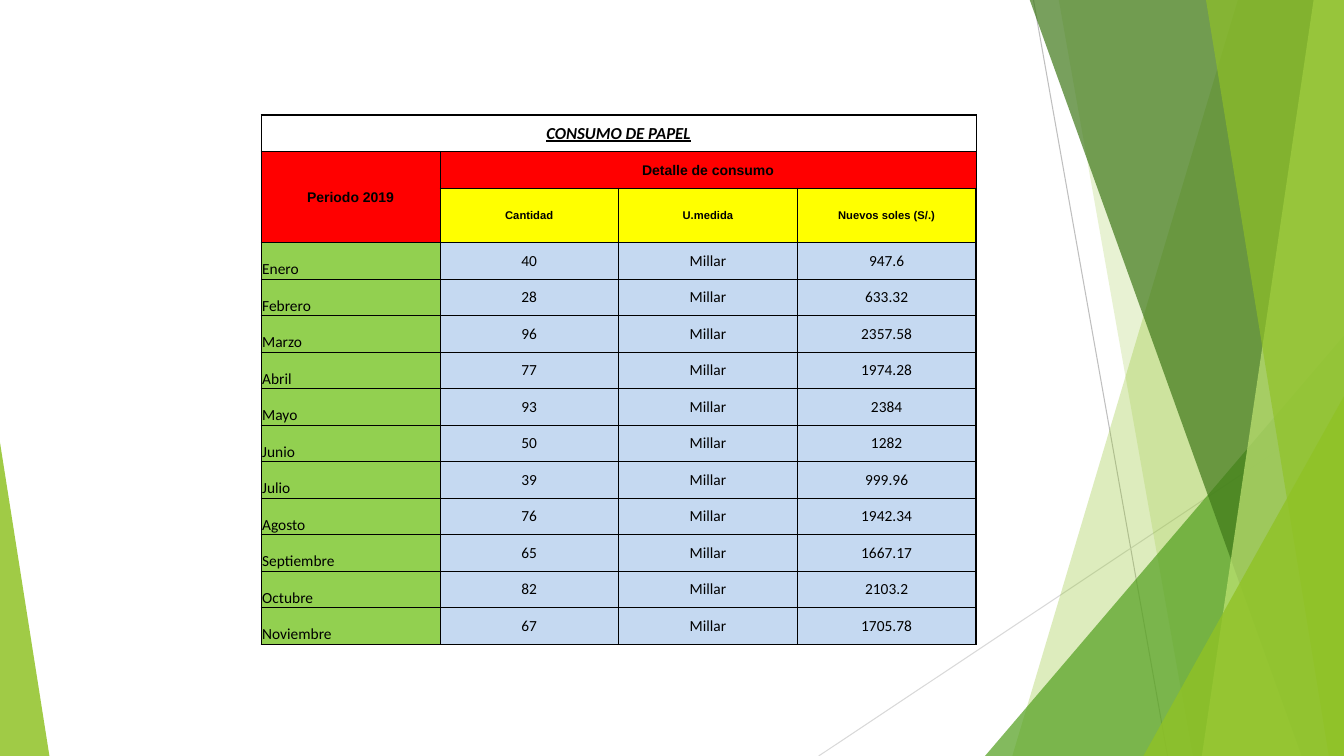
from lxml.etree import SubElement
from pptx import Presentation
from pptx.dml.color import RGBColor
from pptx.enum.shapes import MSO_CONNECTOR, MSO_SHAPE
from pptx.enum.text import MSO_ANCHOR, PP_ALIGN
from pptx.oxml.ns import qn
from pptx.util import Inches, Pt

WIDTH, HEIGHT = 13.33, 7.5
BAND_TOP = -0.01
TABLE_BOX = (2.59, 1.14, 7.09, 5.25)
COLUMN_COUNT = 4
HEADING_ROWS = 3
SUBHEADING_ROW, SUBHEADING_HEIGHT = 2, 0.54

CONSUMPTION = [
    ("Enero", "40", "947.6"),
    ("Febrero", "28", "633.32"),
    ("Marzo", "96", "2357.58"),
    ("Abril", "77", "1974.28"),
    ("Mayo", "93", "2384"),
    ("Junio", "50", "1282"),
    ("Julio", "39", "999.96"),
    ("Agosto", "76", "1942.34"),
    ("Septiembre", "65", "1667.17"),
    ("Octubre", "82", "2103.2"),
    ("Noviembre", "67", "1705.78"),
]

# Text formats
TITLE = {"name": "Calibri", "size": Pt(12), "bold": True, "italic": True, "underline": True}
HEADING = {"name": "Arial", "size": Pt(10), "bold": True}
SUBHEADING = {"name": "Arial", "size": Pt(8), "bold": True}
BODY = {"name": "Calibri", "size": Pt(11), "bold": False}


def color(value):
    return RGBColor.from_string(value)


def paint(shape, fill, opacity):
    """Give a shape a translucent fill and no outline."""
    shape.shadow.inherit = False
    shape.line.fill.background()
    shape.fill.solid()
    shape.fill.fore_color.rgb = color(fill)
    fill_color = shape.fill._xPr.find(qn("a:solidFill"))[0]
    SubElement(fill_color, qn("a:alpha"), val=str(opacity * 1000))


def add_thin_line(slide, start, end, line_color):
    points = [Inches(value) for value in (*start, *end)]
    connector = slide.shapes.add_connector(MSO_CONNECTOR.STRAIGHT, *points)
    connector.line.color.rgb = color(line_color)
    connector.line.width = Pt(0.75)
    SubElement(connector._element.spPr, qn("a:effectLst"))


def add_band(slide, top_x, bottom_x, fill, opacity):
    """Add a band with a slanted left side that reaches the right slide edge."""
    corners = [(top_x, BAND_TOP), (WIDTH, BAND_TOP), (WIDTH, HEIGHT), (bottom_x, HEIGHT)]
    points = [(Inches(x), Inches(y)) for x, y in corners]
    builder = slide.shapes.build_freeform(*points[0])
    builder.add_line_segments(points[1:], close=True)
    paint(builder.convert_to_shape(), fill, opacity)


def add_corner(slide, left, top, width, apex, fill, opacity):
    """Add a triangle that stands on the bottom slide edge."""
    box = [Inches(value) for value in (left, top, width, HEIGHT - top)]
    shape = slide.shapes.add_shape(MSO_SHAPE.ISOSCELES_TRIANGLE, *box)
    shape.adjustments[0] = apex
    paint(shape, fill, opacity)


def add_decoration(slide):
    add_thin_line(slide, (10.25, 0), (11.58, HEIGHT), "BFBFBF")
    add_thin_line(slide, (WIDTH, 4.03), (8.12, HEIGHT), "D9D9D9")
    add_band(slide, 12.28, 10.04, "90C226", 30)
    add_band(slide, 10.5, 11.83, "90C226", 20)
    add_corner(slide, 9.77, 3.33, 3.56, 1, "54A021", 72)
    add_band(slide, 10.21, 12.91, "3F7819", 70)
    add_band(slide, 13.03, 11.92, "C0E474", 70)
    add_band(slide, 11.96, 13.18, "90C226", 65)
    add_corner(slide, 11.34, 3.93, 1.99, 1, "90C226", 80)
    add_corner(slide, 0, 4.39, 0.49, 0, "90C226", 85)


def add_borders(cell, widths):
    properties = cell._tc.get_or_add_tcPr()
    for side, width in widths.items():
        line = SubElement(properties, qn(f"a:ln{side}"), w=str(Pt(width)))
        fill = SubElement(line, qn("a:solidFill"))
        SubElement(fill, qn("a:srgbClr"), val="000000")


def fill_cell(cell, fill):
    if fill:
        cell.fill.solid()
        cell.fill.fore_color.rgb = color(fill)
    else:
        cell.fill.background()


def write_cell(cell, text, font_format, centered=True):
    cell.vertical_anchor = MSO_ANCHOR.MIDDLE if centered else MSO_ANCHOR.BOTTOM
    paragraph = cell.text_frame.paragraphs[0]
    paragraph.alignment = PP_ALIGN.CENTER if centered else PP_ALIGN.LEFT
    run = paragraph.add_run()
    run.text = text
    run.font.color.rgb = color("000000")
    for name, value in font_format.items():
        setattr(run.font, name, value)


def cell_fill(row, column):
    if row == 0:
        return None
    if row < HEADING_ROWS:
        return "FFFF00" if row == SUBHEADING_ROW and column else "FF0000"
    return "C5D9F1" if column else "92D050"


def add_consumption_table(slide):
    row_count = HEADING_ROWS + len(CONSUMPTION)
    box = [Inches(value) for value in TABLE_BOX]
    table = slide.shapes.add_table(row_count, COLUMN_COUNT, *box).table
    table.first_row = table.horz_banding = False

    # Sizes
    for column in table.columns:
        column.width = Inches(TABLE_BOX[2] / COLUMN_COUNT)
    for row in table.rows:
        row.height = Inches((TABLE_BOX[3] - SUBHEADING_HEIGHT) / (row_count - 1))
    table.rows[SUBHEADING_ROW].height = Inches(SUBHEADING_HEIGHT)

    # Borders, margins and fills
    margins = {"margin_left": 0.01, "margin_right": 0.01, "margin_top": 0.01, "margin_bottom": 0}
    for row in range(row_count):
        for column in range(COLUMN_COUNT):
            cell = table.cell(row, column)
            add_borders(cell, {
                "L": 1 if column == 0 else 0.5,
                "R": 1 if column == COLUMN_COUNT - 1 else 0.5,
                "T": 1 if row == 0 else 0.5,
                "B": 0.5,
            })
            fill_cell(cell, cell_fill(row, column))
            for name, value in margins.items():
                setattr(cell, name, Inches(value))

    # Headings
    table.cell(0, 0).merge(table.cell(0, 3))
    table.cell(1, 0).merge(table.cell(2, 0))
    table.cell(1, 1).merge(table.cell(1, 3))
    write_cell(table.cell(0, 0), "CONSUMO DE PAPEL", TITLE)
    write_cell(table.cell(1, 0), "Periodo 2019", HEADING)
    write_cell(table.cell(1, 1), "Detalle de consumo", HEADING)
    for column, text in enumerate(("Cantidad", "U.medida", "Nuevos soles (S/.)"), 1):
        write_cell(table.cell(SUBHEADING_ROW, column), text, SUBHEADING)

    # Monthly values
    for row, (month, amount, cost) in enumerate(CONSUMPTION, HEADING_ROWS):
        for column, text in enumerate((month, amount, "Millar", cost)):
            write_cell(table.cell(row, column), text, BODY, centered=column > 0)


def main():
    presentation = Presentation()
    presentation.slide_width = Inches(WIDTH)
    presentation.slide_height = Inches(HEIGHT)
    slide = presentation.slides.add_slide(presentation.slide_layouts[6])
    add_decoration(slide)
    add_consumption_table(slide)
    presentation.save("out.pptx")


if __name__ == "__main__":
    main()
